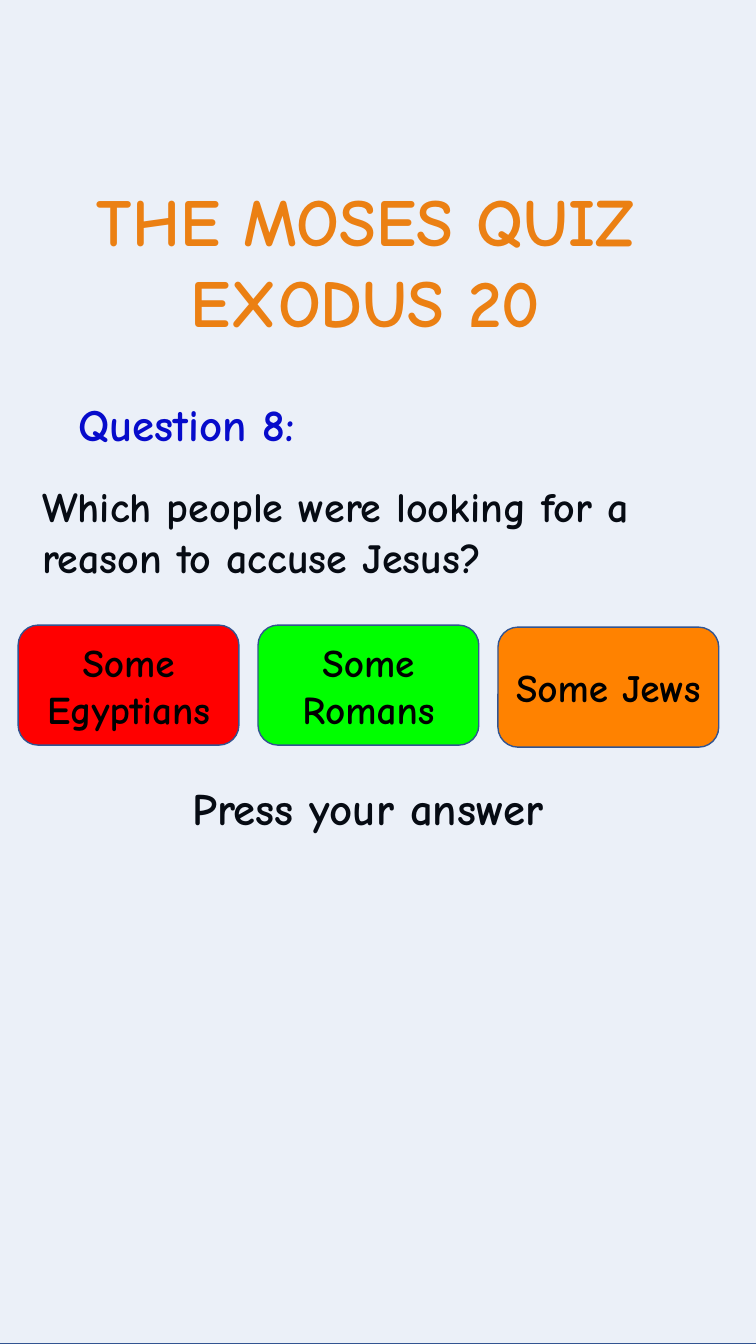
from dataclasses import dataclass

from lxml import etree
from pptx import Presentation
from pptx.dml.color import RGBColor
from pptx.enum import shapes, text
from pptx.oxml import ns
from pptx.util import Inches, Pt


@dataclass(frozen=True)
class Theme:
    font: str = "Comic Neue"
    orange: str = "FF8200"
    red: str = "FF0000"
    green: str = "00FF00"
    blue: str = "0000CC"
    black: str = "000000"
    tint: str = "4472C4"
    outline: str = "325491"
    title_size: int = 48
    label_size: int = 32
    question_size: int = 30
    answer_size: int = 28


THEME = Theme()
CENTER = text.PP_ALIGN.CENTER


def write(frame, lines, size, color, align=None, wrap=True,
          anchor=text.MSO_ANCHOR.TOP, spacing=None, before=None):
    frame.word_wrap = wrap
    frame.auto_size = text.MSO_AUTO_SIZE.NONE
    frame.vertical_anchor = anchor
    for index, line in enumerate(lines):
        para = frame.add_paragraph() if index else frame.paragraphs[0]
        para.alignment = align
        para.line_spacing = spacing
        para.space_before = before
        span = para.add_run()
        span.text = line
        span.font.name = THEME.font
        span.font.size = Pt(size)
        span.font.bold = True
        span.font.color.rgb = RGBColor.from_string(color)


def place_title(page, lines, left, top, width, height):
    title = page.shapes.title
    title.left, title.top = Inches(left), Inches(top)
    title.width, title.height = Inches(width), Inches(height)
    write(title.text_frame, lines, THEME.title_size, THEME.orange,
          align=CENTER, wrap=False)


def add_label(page, line, left, top, width, height, size, color, **layout):
    box = page.shapes.add_textbox(
        Inches(left), Inches(top), Inches(width), Inches(height))
    write(box.text_frame, [line], size, color, **layout)


def add_panel(page, kind, left, top, width, height, color):
    panel = page.shapes.add_shape(
        kind, Inches(left), Inches(top), Inches(width), Inches(height))
    panel.shadow.inherit = False
    panel.fill.solid()
    panel.fill.fore_color.rgb = RGBColor.from_string(color)
    panel.line.color.rgb = RGBColor.from_string(THEME.outline)
    panel.line.width = Pt(1)
    return panel


def add_tint(page):
    tint = add_panel(page, shapes.MSO_SHAPE.RECTANGLE,
                     -0.29, -0.45, 8.16, 13.78, THEME.tint)
    color = tint.fill._xPr.find(ns.qn("a:solidFill"))[0]
    etree.SubElement(color, ns.qn("a:alpha")).set("val", "10000")


def add_answer(page, answer, left, top, color):
    button = add_panel(page, shapes.MSO_SHAPE.ROUNDED_RECTANGLE,
                       left, top, 2.19, 1.19, color)
    write(button.text_frame, [answer], THEME.answer_size, THEME.black,
          align=CENTER, anchor=text.MSO_ANCHOR.MIDDLE)


def main():
    deck = Presentation()
    deck.slide_width, deck.slide_height = Inches(7.5), Inches(13.33)
    page = deck.slides.add_slide(deck.slide_layouts.get_by_name("Title Only"))

    place_title(page, ["THE MOSES QUIZ ", "EXODUS 20 "], 0.3, 1.73, 6.89, 1.72)
    add_label(page, "Press your answer", 1.81, 7.75, 4.22, 0.72,
              THEME.label_size, THEME.black, spacing=0.9, before=Pt(7.5))
    add_label(page, "Which people were looking for a reason to accuse Jesus?",
              0.32, 4.72, 7.02, 1.19, THEME.question_size, THEME.black,
              spacing=Pt(36), before=Pt(7.5))
    add_label(page, "Question 8:", 0.47, 3.89, 2.77, 0.64,
              THEME.label_size, THEME.blue, align=CENTER, wrap=False)
    add_tint(page)

    answers = [
        ("Some Egyptians", 6.2, THEME.red),
        ("Some Romans", 6.2, THEME.green),
        ("Some Jews", 6.22, THEME.orange),
    ]
    for column, (answer, top, color) in enumerate(answers):
        add_answer(page, answer, 0.18 + 2.38 * column, top, color)

    deck.save("out.pptx")


if __name__ == "__main__":
    main()
